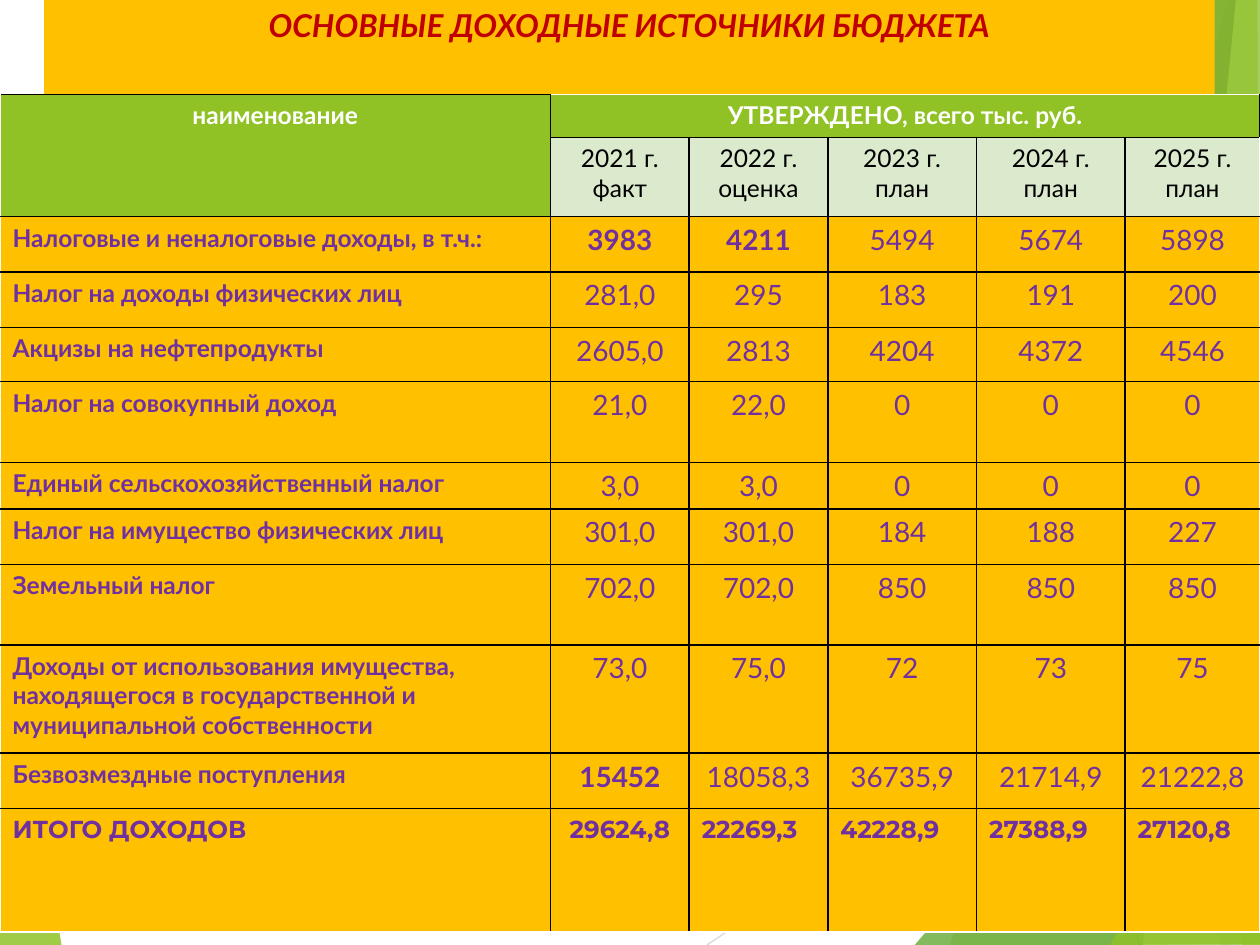
from lxml import etree
from pptx import Presentation
from pptx import util as u
from pptx.dml.color import RGBColor
from pptx.enum import shapes, text
from pptx.oxml import ns

HUES = {
    "lime": "90C226", "leaf": "54A021", "moss": "3F7819", "pale": "C0E474",
    "mint": "DBE9CD", "gold": "FFC000", "red": "C00000", "plum": "7030A0",
    "white": "FFFFFF", "black": "000000", "light": "D9D9D9", "gray": "BFBFBF",
}
MID, LEFT = text.PP_ALIGN.CENTER, text.PP_ALIGN.LEFT

LINES = [((56.1, 75), (100.1, 45.7), "light"), ((77, 0), (90.4, 75), "gray")]
EDGE = ("lime", 85, [(-0.1, 43.9), (4.9, 75.1), (-0.1, 75)])
FACETS = [
    ("lime", 30, [(97.5, 0), (75.4, 75), (100.2, 75.1), (100.1, 0.1)]),
    ("lime", 20, [(78.8, -0.1), (91.9, 75), (100.1, 75), (100.1, -0.1)]),
    ("leaf", 72, [(72.6, 75), (100, 42.9), (100.1, 75)]),
    ("moss", 70, [(76.7, -0.1), (97, 75), (100.1, 74.9), (100.1, -0.1)]),
    ("pale", 70, [(98.1, -0.1), (90.7, 75), (100.1, 75), (100, -0.1)]),
    ("lime", 65, [(88.3, -0.1), (98.6, 75), (100, 75), (99.8, -0.1)]),
    ("lime", 80, [(88.1, 75), (100.1, 53.5), (100.1, 74.9)]),
]

COLS = [43.7, 11, 11, 11.8, 11.8, 10.7]
ROWS = [3.4, 6.3, 4.4, 4.4, 4.3, 6.4, 3.7, 4.4, 6.4, 8.6, 4.4, 9.8]
HEAD = [
    ["наименование", "УТВЕРЖДЕНО, всего тыс. руб.", "", "", "", ""],
    ["", "2021 г. факт", "2022 г. оценка", "2023 г. план", "2024 г. план", "2025 г. план"],
]
BODY = [
    ["Налоговые и неналоговые доходы, в т.ч.:", "3983", "4211", "5494", "5674", "5898"],
    ["Налог на доходы физических лиц", "281,0", "295", "183", "191", "200"],
    ["Акцизы на нефтепродукты", "2605,0", "2813", "4204", "4372", "4546"],
    ["Налог на совокупный доход", "21,0", "22,0", "0", "0", "0"],
    ["Единый сельскохозяйственный налог", "3,0", "3,0", "0", "0", "0"],
    ["Налог на имущество физических лиц", "301,0", "301,0", "184", "188", "227"],
    ["Земельный налог", "702,0", "702,0", "850", "850", "850"],
    ["Доходы от использования имущества, находящегося в государственной "
     "и муниципальной собственности", "73,0", "75,0", "72", "73", "75"],
    ["Безвозмездные поступления", "15452", "18058,3", "36735,9", "21714,9", "21222,8"],
]
TOTAL = ["ИТОГО ДОХОДОВ", "29624,8", "22269,3", "42228,9", "27388,9", "27120,8"]
STRONG = {"3983", "4211", "15452"}


class Deck:
    def __init__(self):
        self.show = Presentation()
        self.show.slide_width, self.show.slide_height = u.Inches(10), u.Inches(7.5)
        self.slide = self.show.slides.add_slide(self.show.slide_layouts[6])
        self.unit = self.show.slide_width / 100

    def grid(self, *marks):
        return [round(mark * self.unit) for mark in marks]

    def hue(self, name):
        return RGBColor.from_string(HUES[name])

    def paint(self, item, name):
        item.fill.solid()
        item.fill.fore_color.rgb = self.hue(name)

    def label(self, frame, words, size, name, bold=True, slant=False, face="Lato", align=MID):
        frame.text = words
        para = frame.paragraphs[0]
        para.alignment = align
        for run in para.runs:
            font = run.font
            font.size, font.name = u.Pt(size), face
            font.bold, font.italic = bold, slant
            font.color.rgb = self.hue(name)

    def line(self, start, end, name):
        rule = self.slide.shapes.add_connector(
            shapes.MSO_CONNECTOR.STRAIGHT, *self.grid(*start, *end))
        rule.line.color.rgb = self.hue(name)
        rule.line.width = u.Pt(0.75)
        etree.SubElement(rule.element.spPr, ns.qn("a:effectLst"))

    def facet(self, name, share, points):
        spots = [self.grid(*point) for point in points]
        pen = self.slide.shapes.build_freeform(*spots[0])
        pen.add_line_segments(spots[1:], close=True)
        form = pen.convert_to_shape()
        form.shadow.inherit = False
        self.paint(form, name)
        form.line.fill.background()
        tint = form.element.spPr.find(ns.qn("a:solidFill"))[0]
        etree.SubElement(tint, ns.qn("a:alpha"), val=str(share * 1000))

    def title(self, words, *box):
        bar = self.slide.shapes.add_shape(shapes.MSO_SHAPE.RECTANGLE, *self.grid(*box))
        bar.shadow.inherit = False
        self.paint(bar, "gold")
        bar.line.fill.background()
        bar.text_frame.word_wrap = True
        bar.text_frame.vertical_anchor = text.MSO_ANCHOR.TOP
        self.label(bar.text_frame, words, 18, "red", slant=True)

    def frame(self, cell, sides):
        props = cell._tc.get_or_add_tcPr()
        for spot, (side, name) in enumerate(sides.items()):
            edge = etree.Element(ns.qn("a:ln" + side), w=str(u.Pt(1)))
            fill = etree.SubElement(edge, ns.qn("a:solidFill"))
            etree.SubElement(fill, ns.qn("a:srgbClr"), val=HUES[name])
            props.insert(spot, edge)

    def look(self, row, col, words):
        if row == 0 or (row == 1 and col == 0):
            return "lime", dict(size=14, name="white")
        if row == 1:
            return "mint", dict(size=14, name="black", bold=False)
        if row == len(ROWS) - 1:
            return "gold", dict(size=14, name="plum", face="Montserrat",
                                align=MID if col == 1 else LEFT)
        if col == 0:
            return "gold", dict(size=14, name="plum", align=LEFT)
        return "gold", dict(size=16, name="plum", bold=words in STRONG)

    def table(self, data, *box):
        grid = self.slide.shapes.add_table(len(ROWS), len(COLS), *self.grid(*box)).table
        grid.horz_banding = False
        for part, size in zip(grid.columns, self.grid(*COLS)):
            part.width = size
        for part, size in zip(grid.rows, self.grid(*ROWS)):
            part.height = size
        grid.cell(0, 0).merge(grid.cell(1, 0))
        grid.cell(0, 1).merge(grid.cell(0, 5))
        for row, words in enumerate(data):
            for col, word in enumerate(words):
                cell = grid.cell(row, col)
                fill, style = self.look(row, col, word)
                self.paint(cell, fill)
                if word:
                    self.label(cell.text_frame, word, **style)
                rims = {
                    "L": col == 0,
                    "R": col == len(COLS) - 1,
                    "T": row == 0 and col > 0,
                    "B": row == len(ROWS) - 1,
                }
                self.frame(cell, {side: "white" if rim else "black"
                                  for side, rim in rims.items()})


def main():
    deck = Deck()
    deck.facet(*EDGE)
    for rule in LINES:
        deck.line(*rule)
    for shape in FACETS:
        deck.facet(*shape)
    deck.title("ОСНОВНЫЕ ДОХОДНЫЕ ИСТОЧНИКИ БЮДЖЕТА", 3.5, 0, 92.9, 7.5)
    deck.table(HEAD + BODY + [TOTAL], 0, 7.5, sum(COLS), sum(ROWS))
    deck.show.save("out.pptx")


if __name__ == "__main__":
    main()
